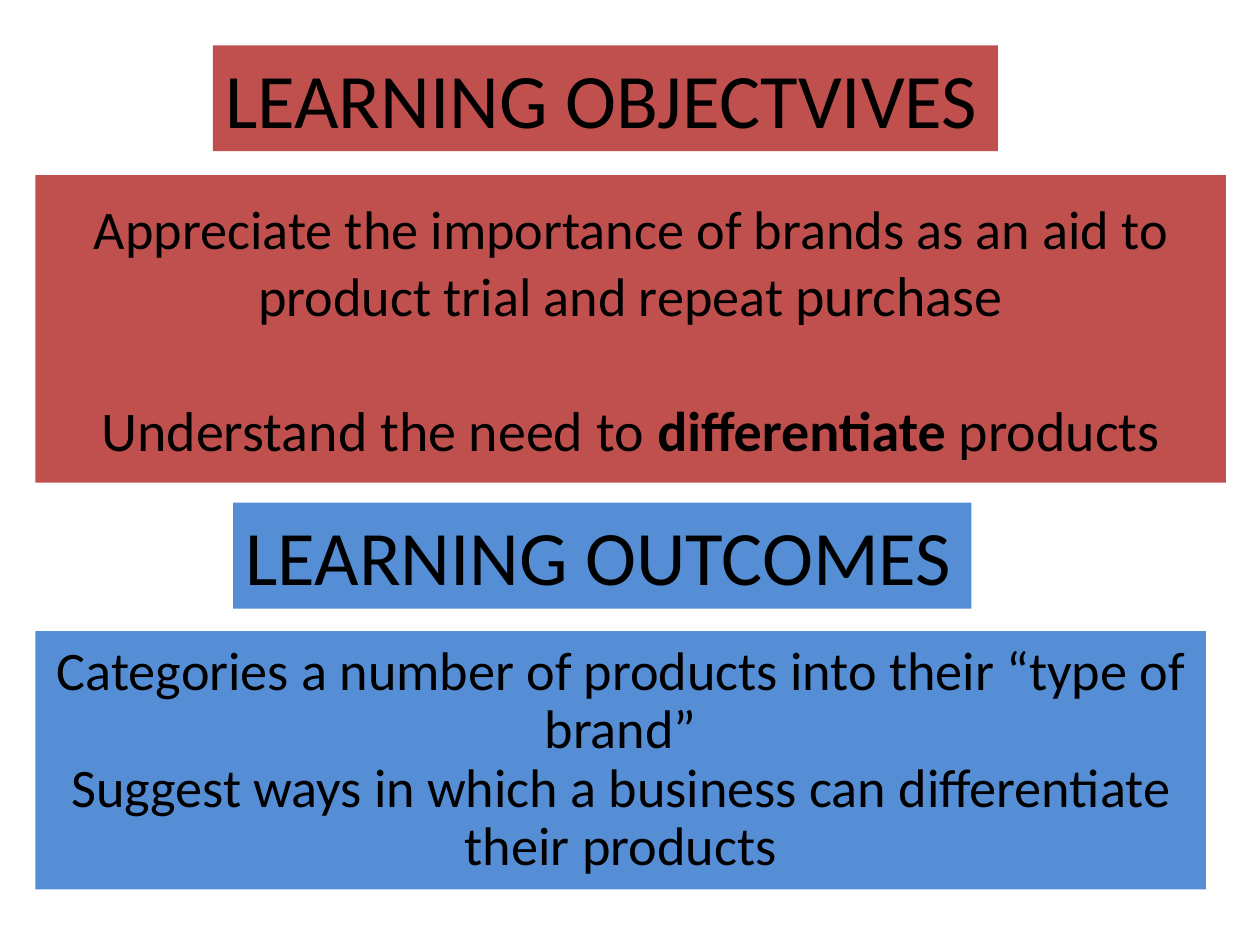
from pptx import Presentation
from pptx.dml.color import RGBColor
from pptx.enum.text import MSO_ANCHOR, MSO_AUTO_SIZE, PP_ALIGN
from pptx.util import Inches, Pt

COLOURS = {"objectives": "C0504D", "outcomes": "558ED5", "text": "000000"}
FONT = "Calibri"
MARGIN = 0.28
HEADING_HEIGHT = 0.84
HEADING_SIZE = 44

# Each span is (text, size, bold)
OBJECTIVES = [
    [("Appreciate the importance of brands as an aid to product trial and repeat ", 31, False),
     ("purchase", 32, False)],
    [("Understand the need to ", 32, False),
     ("differentiate", 32, True),
     (" products", 32, False)],
]
OUTCOMES = [
    [("Categories a number of products into their “type of brand”", 31, False)],
    [("Suggest ways in which a business can differentiate their products", 31, False)],
]
# Each heading is (text, colour, left, top, width)
HEADINGS = [
    ("LEARNING OBJECTVIVES", "objectives", 1.69, 0.36, 6.23),
    ("LEARNING OUTCOMES", "outcomes", 1.85, 3.99, 5.86),
]


def fill_panel(box, colour, place, paragraphs, align, anchor, line_spacing=1.0, gap=0):
    """Place and colour a box, then write its paragraphs, gap points apart."""
    box.left, box.top, box.width, box.height = map(Inches, place)
    box.fill.solid()
    box.fill.fore_color.rgb = RGBColor.from_string(COLOURS[colour])
    frame = box.text_frame
    frame.word_wrap = True
    frame.auto_size = MSO_AUTO_SIZE.NONE
    frame.vertical_anchor = anchor
    for index, spans in enumerate(paragraphs):
        para = frame.add_paragraph() if index else frame.paragraphs[0]
        para.alignment = align
        para.line_spacing = line_spacing
        para.space_before = Pt(gap if index else 0)
        for text, size, bold in spans:
            span = para.add_run()
            span.text = text
            span.font.name = FONT
            span.font.size = Pt(size)
            span.font.bold = bold
            span.font.color.rgb = RGBColor.from_string(COLOURS["text"])


deck = Presentation()
deck.slide_width, deck.slide_height = Inches(10), Inches(7.5)
page = deck.slides.add_slide(deck.slide_layouts.get_by_name("Title Only"))


def add_box():
    return page.shapes.add_textbox(0, 0, 0, 0)


fill_panel(page.shapes.title, "objectives", (MARGIN, 1.39, 9.45, 2.44), OBJECTIVES,
           PP_ALIGN.CENTER, MSO_ANCHOR.MIDDLE, gap=39)
fill_panel(add_box(), "outcomes", (MARGIN, 5.01, 9.29, 2.05), OUTCOMES,
           PP_ALIGN.CENTER, MSO_ANCHOR.MIDDLE, line_spacing=0.9)
for text, colour, left, top, width in HEADINGS:
    fill_panel(add_box(), colour, (left, top, width, HEADING_HEIGHT),
               [[(text, HEADING_SIZE, False)]], PP_ALIGN.LEFT, MSO_ANCHOR.TOP)

deck.save("out.pptx")
